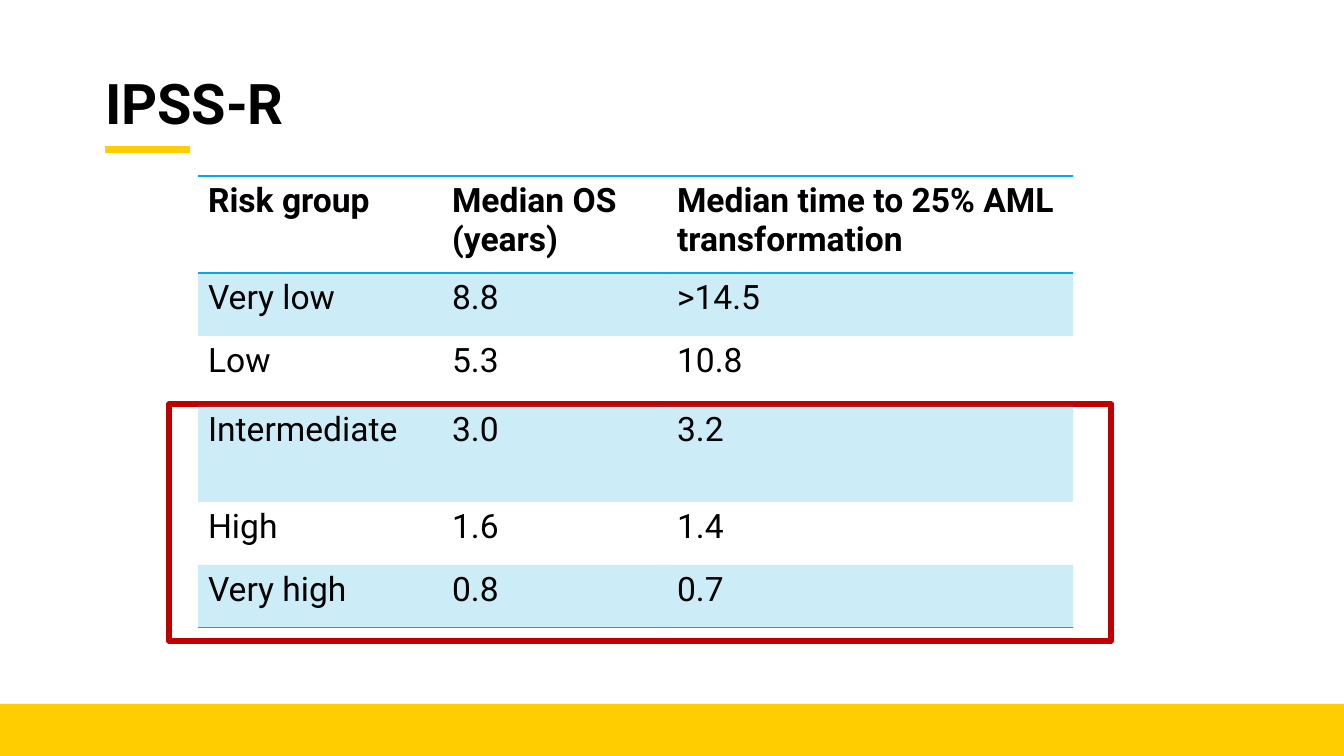
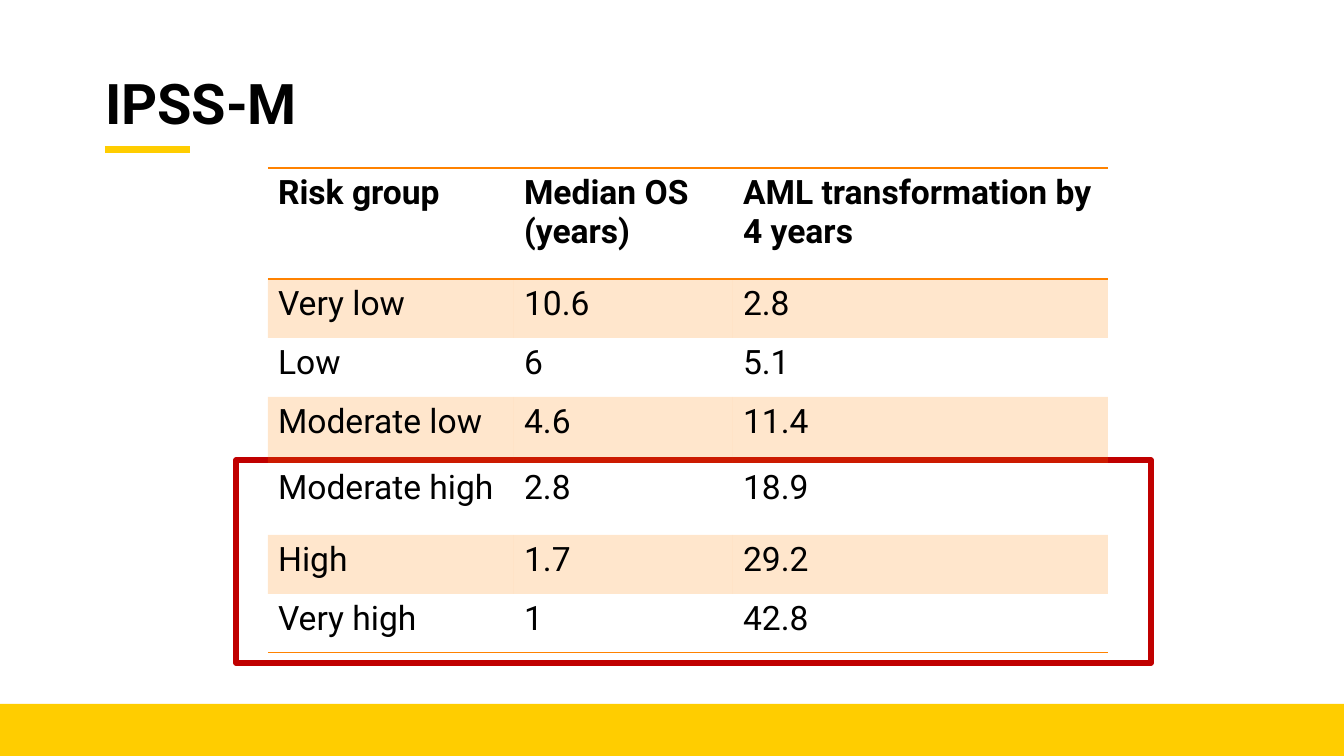
from lxml.etree import SubElement
from pptx import Presentation
from pptx.dml.color import RGBColor
from pptx.enum.shapes import MSO_CONNECTOR, MSO_SHAPE
from pptx.enum.text import MSO_ANCHOR, PP_ALIGN
from pptx.oxml import parse_xml
from pptx.oxml.ns import nsdecls, qn
from pptx.util import Emu, Pt

FONT = "Roboto"
BLACK, WHITE = "000000", "FFFFFF"
GOLD, RED, BLUE, ORANGE = "FFCD00", "C00000", "00A9E0", "FF8200"
PLAIN_TABLE = "{2D5ABB26-0587-4C30-8999-92F81FD0307C}"
WIDTH, HEIGHT = 1344, 756
MARGIN = 105


def px(n):
    return Emu(round(n * 914400 / 100.8))


def rgb(color):
    return RGBColor.from_string(color)


def style_font(p, size, bold):
    p.font.name, p.font.size, p.font.bold = FONT, Pt(size), bold
    p.font.color.rgb = rgb(BLACK)


def tint(cell, color, percent):
    """Fill a cell with a partly transparent colour."""
    cell.fill.solid()
    cell.fill.fore_color.rgb = rgb(color)
    clr = cell.fill._xPr.find(".//" + qn("a:srgbClr"))
    SubElement(clr, qn("a:alpha"), val=str(percent * 1000))


def add_borders(cell, color, sides):
    """Draw 1 pt lines on the given sides: T and/or B, in that order."""
    tc_pr = cell.fill._xPr
    for i, side in enumerate(sides):
        tc_pr.insert(i, parse_xml(
            f'<a:ln{side} {nsdecls("a")} w="{Pt(1)}"><a:solidFill>'
            f'<a:srgbClr val="{color}"/></a:solidFill></a:ln{side}>'))


class Deck:
    """Holds the presentation, its shared style and the current slide."""

    def __init__(self):
        self.prs = Presentation()
        self.prs.slide_width, self.prs.slide_height = px(WIDTH), px(HEIGHT)
        self.slide = None

    def new_slide(self, title):
        self.slide = self.prs.slides.add_slide(self.prs.slide_layouts[5])
        self.rect(0, 704, WIDTH, 52, fill=GOLD)
        self.line(MARGIN, 150, 190, 150, GOLD, 5)
        self.title(title)

    def title(self, text):
        sp = self.slide.shapes.title
        sp.left, sp.top, sp.width, sp.height = map(px, (MARGIN, 58, 1134, 96))
        tf = sp.text_frame
        tf.text = text
        tf.word_wrap = True
        tf.vertical_anchor = MSO_ANCHOR.MIDDLE
        tf.margin_left = tf.margin_right = tf.margin_top = tf.margin_bottom = 0
        p = tf.paragraphs[0]
        p.alignment, p.line_spacing = PP_ALIGN.LEFT, 0.9
        style_font(p, 40, True)

    def rect(self, x, y, w, h, fill, line=None):
        sp = self.slide.shapes.add_shape(MSO_SHAPE.RECTANGLE, px(x), px(y), px(w), px(h))
        sp.shadow.inherit = False
        sp.fill.solid()
        sp.fill.fore_color.rgb = rgb(fill)
        if line:
            sp.line.color.rgb, sp.line.width = rgb(line), Pt(4)
        else:
            sp.line.fill.background()

    def line(self, x1, y1, x2, y2, color, width):
        cxn = self.slide.shapes.add_connector(
            MSO_CONNECTOR.STRAIGHT, px(x1), px(y1), px(x2), px(y2))
        cxn.line.color.rgb, cxn.line.width = rgb(color), Pt(width)
        SubElement(cxn.element.spPr, qn("a:effectLst"))

    def table(self, x, y, widths, heights, rows, color):
        """Add a table with a ruled header and tinted odd rows."""
        frame = self.slide.shapes.add_table(
            len(rows), len(widths), px(x), px(y), px(sum(widths)), px(sum(heights)))
        frame.element.find(".//" + qn("a:tableStyleId")).text = PLAIN_TABLE
        table = frame.table
        for column, width in zip(table.columns, widths):
            column.width = px(width)
        for row, height in zip(table.rows, heights):
            row.height = px(height)
        for r, values in enumerate(rows):
            for c, value in enumerate(values):
                cell = table.cell(r, c)
                cell.text = value
                style_font(cell.text_frame.paragraphs[0], 24, r == 0)
                if r % 2:
                    tint(cell, color, 20)
                else:
                    cell.fill.background()
                if r == 0:
                    add_borders(cell, color, "TB")
                elif r == len(rows) - 1:
                    add_borders(cell, color, "B")


def main():
    deck = Deck()

    deck.new_slide("IPSS-R")
    deck.rect(169, 404, 942, 237, WHITE, RED)
    deck.table(198, 176, [244, 225, 406], [97, 63, 69, 97, 63, 63], [
        ("Risk group", "Median OS (years)", "Median time to 25% AML transformation"),
        ("Very low", "8.8", ">14.5"),
        ("Low", "5.3", "10.8"),
        ("Intermediate", "3.0", "3.2"),
        ("High", "1.6", "1.4"),
        ("Very high", "0.8", "0.7"),
    ], BLUE)

    deck.new_slide("IPSS-M")
    deck.rect(236, 460, 915, 203, WHITE, RED)
    deck.table(268, 168, [246, 219, 375], [111, 59, 59, 66, 72, 59, 59], [
        ("Risk group", "Median OS (years)", "AML transformation by 4 years"),
        ("Very low", "10.6", "2.8"),
        ("Low", "6", "5.1"),
        ("Moderate low", "4.6", "11.4"),
        ("Moderate high", "2.8", "18.9"),
        ("High", "1.7", "29.2"),
        ("Very high", "1", "42.8"),
    ], ORANGE)

    deck.prs.save("out.pptx")


if __name__ == "__main__":
    main()
